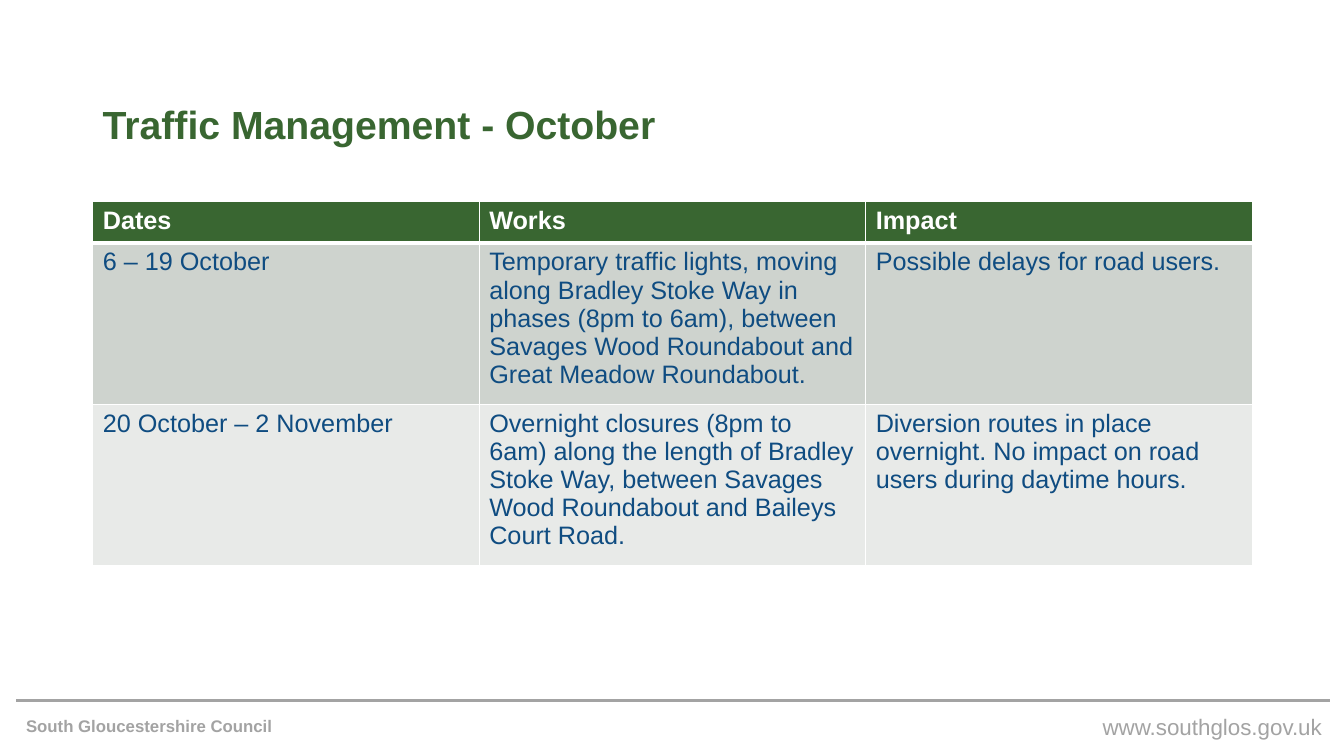
from lxml import etree
from pptx import Presentation
from pptx.dml.color import RGBColor
from pptx.enum.shapes import MSO_CONNECTOR
from pptx.enum.text import MSO_ANCHOR, PP_ALIGN
from pptx.oxml.ns import qn
from pptx.util import Inches, Pt

STRAIGHT = MSO_CONNECTOR.STRAIGHT
MIDDLE = MSO_ANCHOR.MIDDLE
TOP = MSO_ANCHOR.TOP
LEFT = PP_ALIGN.LEFT
RIGHT = PP_ALIGN.RIGHT

FONT = "Arial"
COLORS = {
    "green": "396631",
    "blue": "0F4C81",
    "grey": "A3A3A3",
    "white": "FFFFFF",
    "dark_band": "CED3CE",
    "light_band": "E8EAE8",
}
ROWS = [
    ("Dates", "Works", "Impact"),
    (
        "6 – 19 October",
        "Temporary traffic lights, moving along Bradley Stoke Way in phases "
        "(8pm to 6am), between Savages Wood Roundabout and Great Meadow Roundabout.",
        "Possible delays for road users.",
    ),
    (
        "20 October – 2 November",
        "Overnight closures (8pm to 6am) along the length of Bradley Stoke Way, "
        "between Savages Wood Roundabout and Baileys Court Road.",
        "Diversion routes in place overnight. No impact on road users during daytime hours.",
    ),
]
ROW_HEIGHTS = [0.41, 1.5, 1.5]
ROW_FILLS = ["green", "dark_band", "light_band"]


def color(name):
    return RGBColor.from_string(COLORS[name])


def format_text(text_frame, size, color_name, bold):
    for paragraph in text_frame.paragraphs:
        for run in paragraph.runs:
            run.font.name = FONT
            run.font.size = Pt(size)
            run.font.bold = bold
            run.font.color.rgb = color(color_name)


def add_text(slide, box, text, size, color_name, bold=False, align=LEFT, anchor=TOP):
    shape = slide.shapes.add_textbox(*(Inches(value) for value in box))
    text_frame = shape.text_frame
    text_frame.word_wrap = True
    text_frame.vertical_anchor = anchor
    text_frame.text = text
    text_frame.paragraphs[0].alignment = align
    format_text(text_frame, size, color_name, bold)
    return shape


def add_title(slide, box):
    title = add_text(slide, box, "Traffic Management - October", 28, "green", True, anchor=MIDDLE)
    title.text_frame.paragraphs[0].line_spacing = 0.9


def set_borders(cell, bottom_width, top_width):
    properties = cell._tc.get_or_add_tcPr()
    widths = {"a:lnL": 1, "a:lnR": 1, "a:lnT": top_width, "a:lnB": bottom_width}
    for position, (tag, width) in enumerate(widths.items()):
        line = etree.Element(qn(tag), w=str(Pt(width)))
        fill = etree.SubElement(line, qn("a:solidFill"))
        etree.SubElement(fill, qn("a:srgbClr"), val=COLORS["white"])
        properties.insert(position, line)


def add_works_table(slide, box):
    left, top, width, height = (Inches(value) for value in box)
    table = slide.shapes.add_table(len(ROWS), len(ROWS[0]), left, top, width, height).table
    for row_index, texts in enumerate(ROWS):
        table.rows[row_index].height = Inches(ROW_HEIGHTS[row_index])
        is_header = row_index == 0
        for column_index, text in enumerate(texts):
            cell = table.cell(row_index, column_index)
            cell.fill.solid()
            cell.fill.fore_color.rgb = color(ROW_FILLS[row_index])
            cell.text_frame.text = text
            format_text(cell.text_frame, 18, "white" if is_header else "blue", is_header)
            set_borders(cell, 3 if is_header else 1, 3 if row_index == 1 else 1)


def add_footer(slide, box):
    left, top, width, height = box
    right = left + width
    rule = slide.shapes.add_connector(
        STRAIGHT, Inches(left), Inches(top), Inches(right), Inches(top)
    )
    rule.line.color.rgb = color("grey")
    rule.line.width = Pt(0)
    etree.SubElement(rule._element.spPr, qn("a:effectLst"))
    text_top = top + 0.08
    add_text(slide, (right - 3.17, text_top, 3.19, 0.37), "www.southglos.gov.uk",
             16, "grey", align=RIGHT)
    add_text(slide, (left, text_top, 4.5, 0.34), "South Gloucestershire Council",
             12, "grey", True, anchor=MIDDLE)


def main():
    presentation = Presentation()
    presentation.slide_width = Inches(13.33)
    presentation.slide_height = Inches(7.5)
    slide = presentation.slides.add_slide(presentation.slide_layouts[6])
    add_title(slide, (0.92, 0.53, 10.04, 1.45))
    add_works_table(slide, (0.92, 2, 11.5, sum(ROW_HEIGHTS)))
    add_footer(slide, (0.16, 6.95, 13.03, 0.45))
    presentation.save("out.pptx")


if __name__ == "__main__":
    main()
